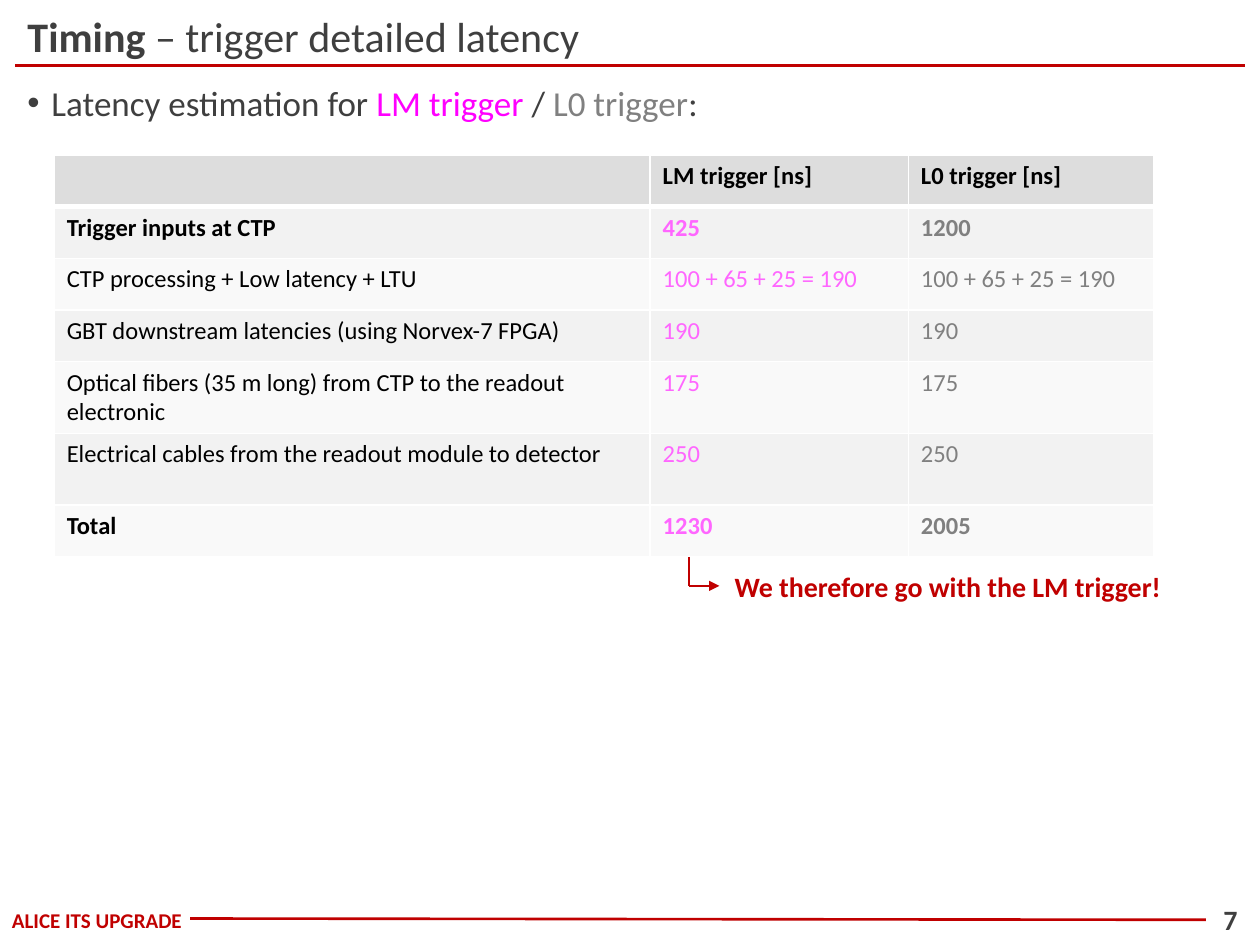
from lxml.etree import SubElement
from pptx import Presentation
from pptx.dml.color import RGBColor
from pptx.enum.shapes import MSO_CONNECTOR
from pptx.enum.text import MSO_ANCHOR, PP_ALIGN
from pptx.oxml import parse_xml
from pptx.oxml.ns import nsdecls, qn
from pptx.util import Inches, Pt

COLORS = {
    "red": "C00000", "dark": "3F3F3F", "gray": "808080", "black": "000000",
    "magenta": "FF00FF", "pink": "FF66FF", "white": "FFFFFF",
    "header": "DDDDDD", "odd_row": "F2F2F2", "even_row": "F9F9F9",
}
FONT = "Calibri"

LATENCIES = [
    ("", "LM trigger [ns]", "L0 trigger [ns]"),
    ("Trigger inputs at CTP", "425", "1200"),
    ("CTP processing + Low latency + LTU", "100 + 65 + 25 = 190", "100 + 65 + 25 = 190"),
    ("GBT downstream latencies (using Norvex-7 FPGA)", "190", "190"),
    ("Optical fibers (35 m long) from CTP to the readout electronic", "175", "175"),
    ("Electrical cables from the readout module to detector", "250", "250"),
    ("Total", "1230", "2005"),
]
COLUMN_WIDTHS = (4.73, 2.05, 1.95)
ROW_HEIGHTS = (0.41, 0.41, 0.41, 0.41, 0.57, 0.57, 0.41)
COLUMN_COLORS = ("black", "pink", "gray")
BOLD_ROWS = (0, 1, len(LATENCIES) - 1)


def rgb(name):
    return RGBColor.from_string(COLORS[name])


class SlideBuilder:
    def __init__(self, slide):
        self.slide = slide

    def style(self, font, size, color, bold=False):
        font.name = FONT
        font.size = Pt(size)
        font.bold = bold
        font.color.rgb = rgb(color)

    def text(self, box, runs, size, color, bold=False, align=PP_ALIGN.LEFT,
             anchor=MSO_ANCHOR.MIDDLE, insets=(0.04, 0.04), wrap=True, bullet=None):
        """Add one paragraph; runs are (text, font overrides) pairs, insets are (x, y)."""
        shape = self.slide.shapes.add_textbox(*map(Inches, box))
        frame = shape.text_frame
        frame.word_wrap = wrap
        frame.vertical_anchor = anchor
        frame.margin_left = frame.margin_right = Inches(insets[0])
        frame.margin_top = frame.margin_bottom = Inches(insets[1])
        paragraph = frame.paragraphs[0]
        paragraph.alignment = align
        if bullet:
            properties = paragraph._p.get_or_add_pPr()
            properties.set("marL", str(Inches(0.19)))
            properties.set("indent", str(-Inches(0.19)))
            SubElement(properties, qn("a:buFont")).set("typeface", "Arial")
            SubElement(properties, qn("a:buChar")).set("char", bullet)
        self.style(paragraph.font, size, color, bold)
        for words, overrides in runs:
            run = paragraph.add_run()
            run.text = words
            self.style(run.font, size, overrides.get("color", color),
                       overrides.get("bold", bold))

    def line(self, start, end, width=1.5, arrow=False):
        connector = self.slide.shapes.add_connector(
            MSO_CONNECTOR.STRAIGHT, *map(Inches, start + end))
        connector.line.color.rgb = rgb("red")
        connector.line.width = Pt(width)
        if arrow:
            SubElement(connector.line._get_or_add_ln(), qn("a:tailEnd")).set("type", "triangle")
        SubElement(connector._element.spPr, qn("a:effectLst"))

    def borders(self, cell, top, bottom):
        """Draw white borders; they must come before the fill in the cell properties."""
        properties = cell._tc.get_or_add_tcPr()
        widths = {"lnL": 1, "lnR": 1, "lnT": top, "lnB": bottom}
        for position, (side, width) in enumerate(widths.items()):
            properties.insert(position, parse_xml(
                f'<a:{side} {nsdecls("a")} w="{Pt(width)}"><a:solidFill>'
                f'<a:srgbClr val="{COLORS["white"]}"/></a:solidFill></a:{side}>'))

    def table(self, left, top, rows):
        table = self.slide.shapes.add_table(
            len(rows), len(COLUMN_WIDTHS), Inches(left), Inches(top),
            Inches(sum(COLUMN_WIDTHS)), Inches(sum(ROW_HEIGHTS))).table
        for column, width in zip(table.columns, COLUMN_WIDTHS):
            column.width = Inches(width)
        for row, height in zip(table.rows, ROW_HEIGHTS):
            row.height = Inches(height)
        for row_index, values in enumerate(rows):
            is_header = row_index == 0
            fill = "header" if is_header else ("even_row", "odd_row")[row_index % 2]
            for column_index, value in enumerate(values):
                cell = table.cell(row_index, column_index)
                cell.text = value
                cell.fill.solid()
                cell.fill.fore_color.rgb = rgb(fill)
                color = "black" if is_header else COLUMN_COLORS[column_index]
                self.style(cell.text_frame.paragraphs[0].font, 14, color,
                           row_index in BOLD_ROWS)
                self.borders(cell, top=3 if row_index == 1 else 1,
                             bottom=3 if is_header else 1)


def main():
    presentation = Presentation()
    presentation.slide_width = Inches(10)
    presentation.slide_height = Inches(7.5)
    builder = SlideBuilder(presentation.slides.add_slide(presentation.slide_layouts[6]))

    # Footer and title rule
    builder.line((0.12, 0.52), (9.88, 0.52), width=2.25)
    builder.text((0.02, 7.22, 1.5, 0.16), [("ALICE ITS UPGRADE", {})], 12, "red",
                 bold=True, align=PP_ALIGN.CENTER, insets=(0, 0))
    builder.line((9.57, 7.3), (1.51, 7.29))
    builder.text((9.57, 7.14, 0.39, 0.31), [("7", {})], 16, "dark",
                 bold=True, align=PP_ALIGN.CENTER, wrap=False)

    # Heading and introduction
    builder.text((0.12, 0.6, 9.76, 2.99), [
        ("Latency estimation for ", {}),
        ("LM trigger ", {"color": "magenta"}),
        ("/ ", {}),
        ("L0 trigger", {"color": "gray"}),
        (":", {}),
    ], 20, "dark", anchor=MSO_ANCHOR.TOP, insets=(0.1, 0.05), bullet="•")
    builder.text((0.12, 0.05, 9.76, 0.47), [
        ("Timing", {"bold": True}),
        (" – trigger detailed latency", {}),
    ], 24, "dark", insets=(0.1, 0.04))

    # Conclusion drawn from the LM total
    builder.line((5.16, 4.41), (5.71, 4.41))
    builder.text((5.79, 4.49, 3.54, 0.32), [("We therefore go with the LM trigger!", {})],
                 16, "red", bold=True, wrap=False)
    builder.line((5.47, 4.65), (5.71, 4.65), arrow=True)
    builder.line((5.47, 4.65), (5.47, 4.41))

    builder.table(0.43, 1.23, LATENCIES)
    presentation.save("out.pptx")


if __name__ == "__main__":
    main()
